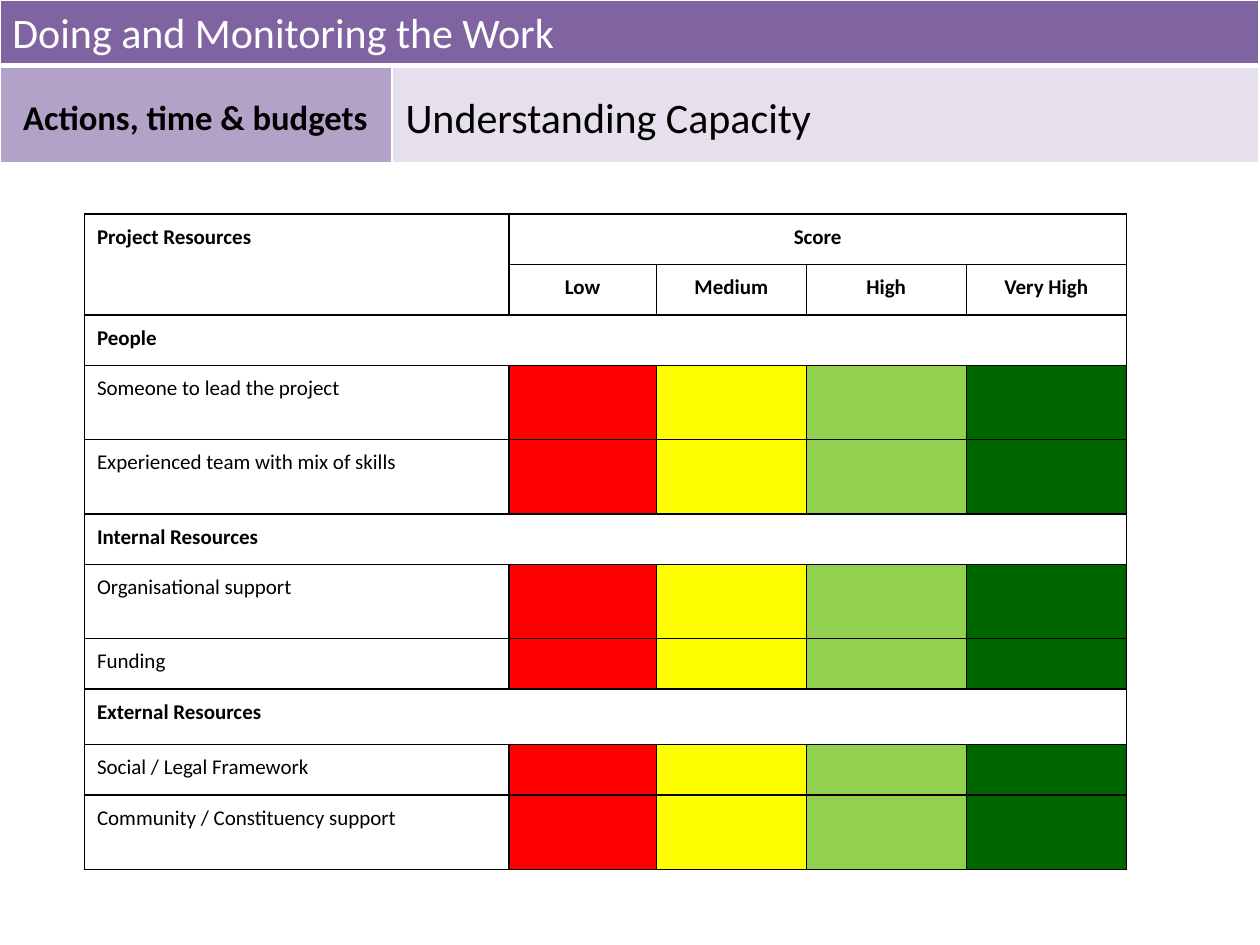
from lxml.etree import SubElement
from pptx import Presentation
from pptx.dml.color import RGBColor
from pptx.enum.text import MSO_ANCHOR, PP_ALIGN
from pptx.oxml.ns import qn
from pptx.util import Inches, Pt

BLACK, WHITE = "000000", "FFFFFF"
BANNER_COLUMNS = [3.11, 6.88]
BANNER_ROWS = [0.52, 0.77]
BANNER_FILLS = [["8064A2", "8064A2"], ["B3A2C7", "E6E0EC"]]
HEADINGS = [
    ("Doing and Monitoring the Work", (0, 0, 9.98, 0.51),
     MSO_ANCHOR.TOP, PP_ALIGN.LEFT, 24, WHITE, False),
    ("Actions, time & budgets", (0.01, 0.57, 3.08, 0.71),
     MSO_ANCHOR.MIDDLE, PP_ALIGN.CENTER, 19.8, BLACK, True),
    ("Understanding Capacity", (3.12, 0.68, 6.88, 0.5),
     MSO_ANCHOR.TOP, PP_ALIGN.LEFT, 24, BLACK, False),
]

SCORES = [("Low", "FF0000"), ("Medium", "FFFF00"),
          ("High", "92D050"), ("Very High", "006600")]
RESOURCES = [
    ("People", 0.4, [("Someone to lead the project", 0.59),
                     ("Experienced team with mix of skills", 0.59)]),
    ("Internal Resources", 0.4, [("Organisational support", 0.59),
                                 ("Funding", 0.4)]),
    ("External Resources", 0.44, [("Social / Legal Framework", 0.4),
                                  ("Community / Constituency support", 0.59)]),
]
SCORE_COLUMNS = [3.37, 1.17, 1.19, 1.27, 1.27]
HEADER_ROWS = [0.4, 0.4]


def rgb(color):
    return RGBColor.from_string(color)


def write(frame, text, align, size, color, bold, spacing=None):
    paragraph = frame.paragraphs[0]
    paragraph.alignment = align
    paragraph.line_spacing = spacing
    run = paragraph.add_run()
    run.text = text
    font_format = {"name": "Calibri", "size": Pt(size), "bold": bold}
    for name, value in font_format.items():
        setattr(run.font, name, value)
    run.font.color.rgb = rgb(color)


def add_border(cell, side, color, width):
    line = SubElement(cell._tc.get_or_add_tcPr(), qn(f"a:ln{side}"), w=str(Pt(width)))
    fill = SubElement(line, qn("a:solidFill"))
    SubElement(fill, qn("a:srgbClr"), val=color)


def add_grid(slide, left, top, widths, heights, border, thick_edges=()):
    table = slide.shapes.add_table(
        len(heights), len(widths), Inches(left), Inches(top),
        Inches(sum(widths)), Inches(sum(heights))).table
    table.first_row = table.horz_banding = False
    for column, width in zip(table.columns, widths):
        column.width = Inches(width)
    for number, (row, height) in enumerate(zip(table.rows, heights)):
        row.height = Inches(height)
        for cell in row.cells:
            for side in "LRTB":
                add_border(cell, side, border, 3 if (number, side) in thick_edges else 1)
            cell.fill.background()
    return table


def fill_cell(cell, color):
    cell.fill.solid()
    cell.fill.fore_color.rgb = rgb(color)
    cell.margin_top = cell.margin_bottom = Inches(0.02)


def add_banner(slide):
    banner = add_grid(slide, 0, 0, BANNER_COLUMNS, BANNER_ROWS, WHITE, {(0, "B"), (1, "T")})
    banner.cell(0, 0).merge(banner.cell(0, 1))
    for row, fills in enumerate(BANNER_FILLS):
        for column, color in enumerate(fills):
            fill_cell(banner.cell(row, column), color)
    for text, place, anchor, align, size, color, bold in HEADINGS:
        frame = slide.shapes.add_textbox(*map(Inches, place)).text_frame
        frame.word_wrap = True
        frame.vertical_anchor = anchor
        write(frame, text, align, size, color, bold)


def add_score_table(slide):
    heights = list(HEADER_ROWS)
    for _, group_height, items in RESOURCES:
        heights += [group_height] + [height for _, height in items]
    table = add_grid(slide, 0.67, 1.7, SCORE_COLUMNS, heights, BLACK)
    last = len(SCORES)

    def label(row, column, text, bold=True):
        align = PP_ALIGN.CENTER if column else PP_ALIGN.LEFT
        write(table.cell(row, column).text_frame, text, align, 12, BLACK, bold, 1.15)

    table.cell(0, 0).merge(table.cell(1, 0))
    table.cell(0, 1).merge(table.cell(0, last))
    label(0, 0, "Project Resources")
    label(0, 1, "Score")
    for column, (score, _) in enumerate(SCORES, 1):
        label(1, column, score)

    row = len(HEADER_ROWS)
    for group, _, items in RESOURCES:
        table.cell(row, 0).merge(table.cell(row, last))
        label(row, 0, group)
        for row, (item, _) in enumerate(items, row + 1):
            label(row, 0, item, False)
            for column, (_, color) in enumerate(SCORES, 1):
                fill_cell(table.cell(row, column), color)
        row += 1


def main():
    deck = Presentation()
    deck.slide_width, deck.slide_height = Inches(10), Inches(7.5)
    slide = deck.slides.add_slide(deck.slide_layouts[6])
    add_banner(slide)
    add_score_table(slide)
    deck.save("out.pptx")


if __name__ == "__main__":
    main()
